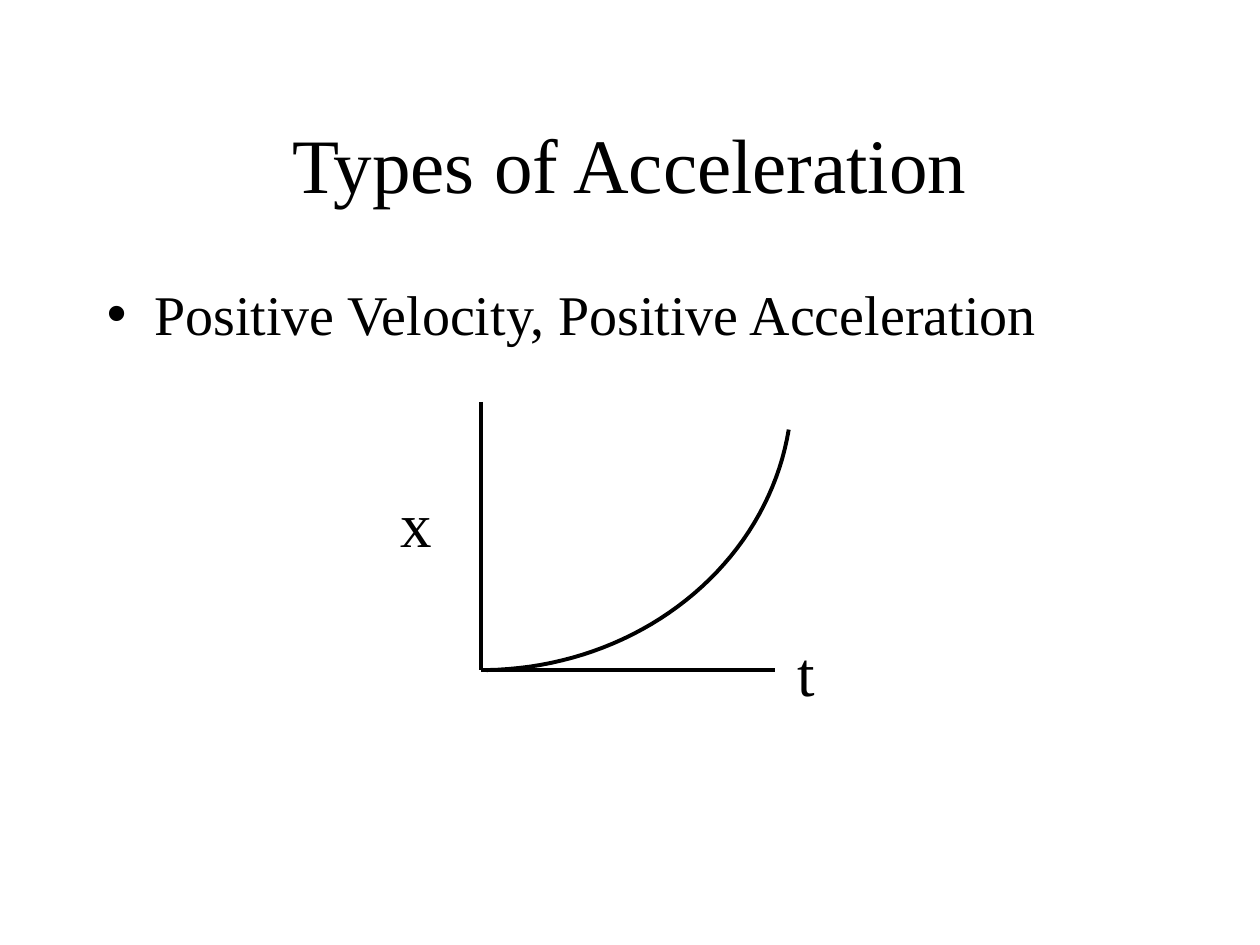
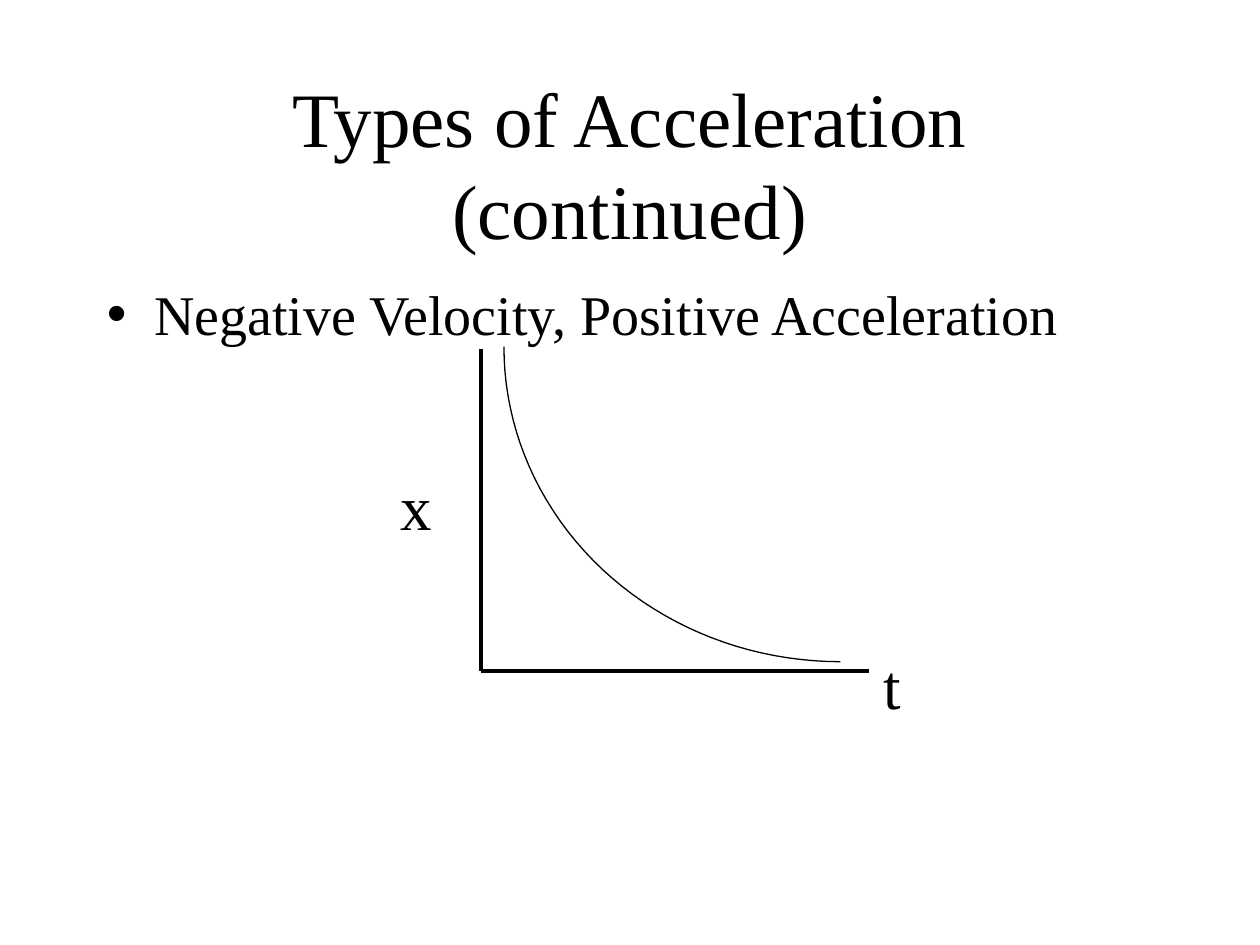
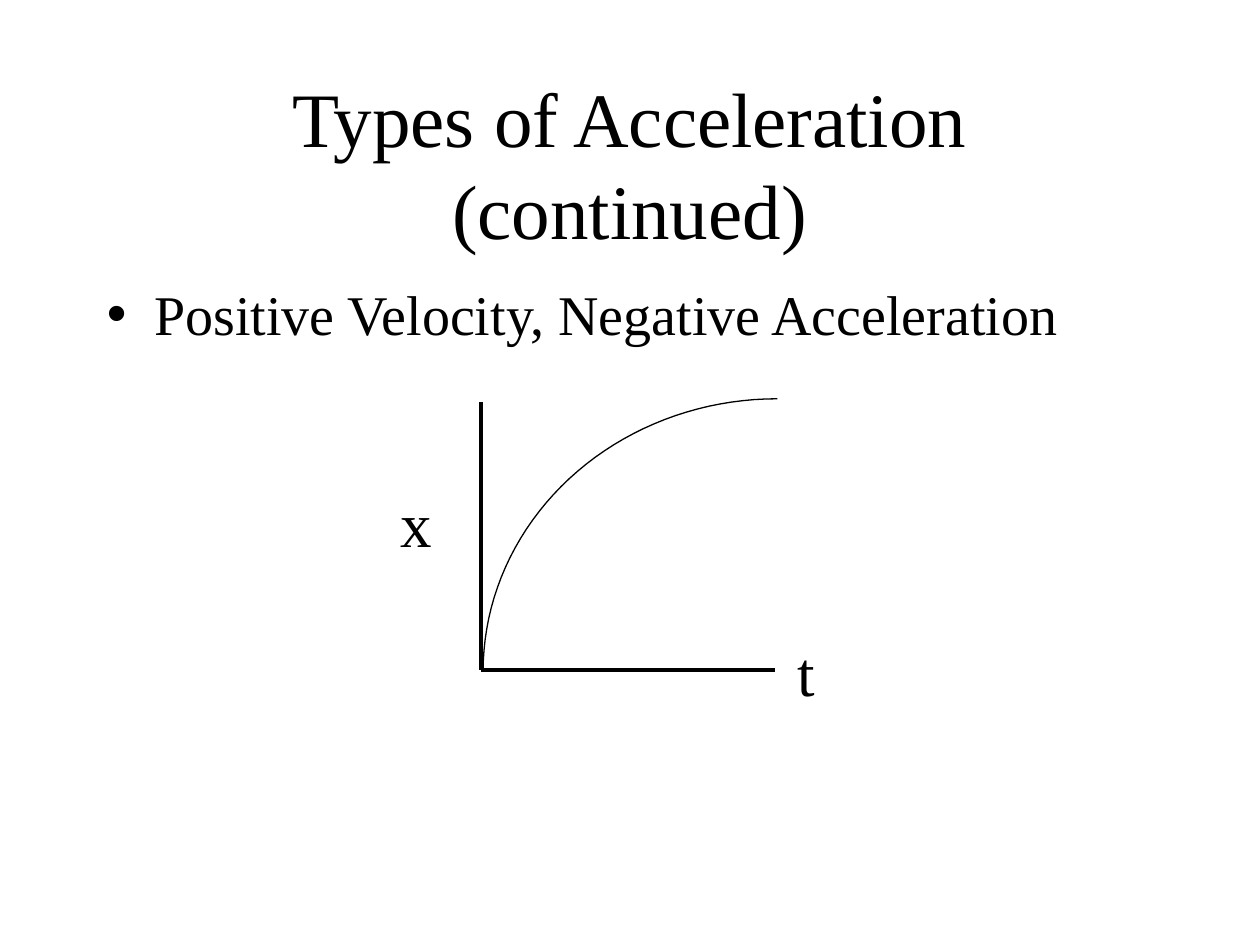
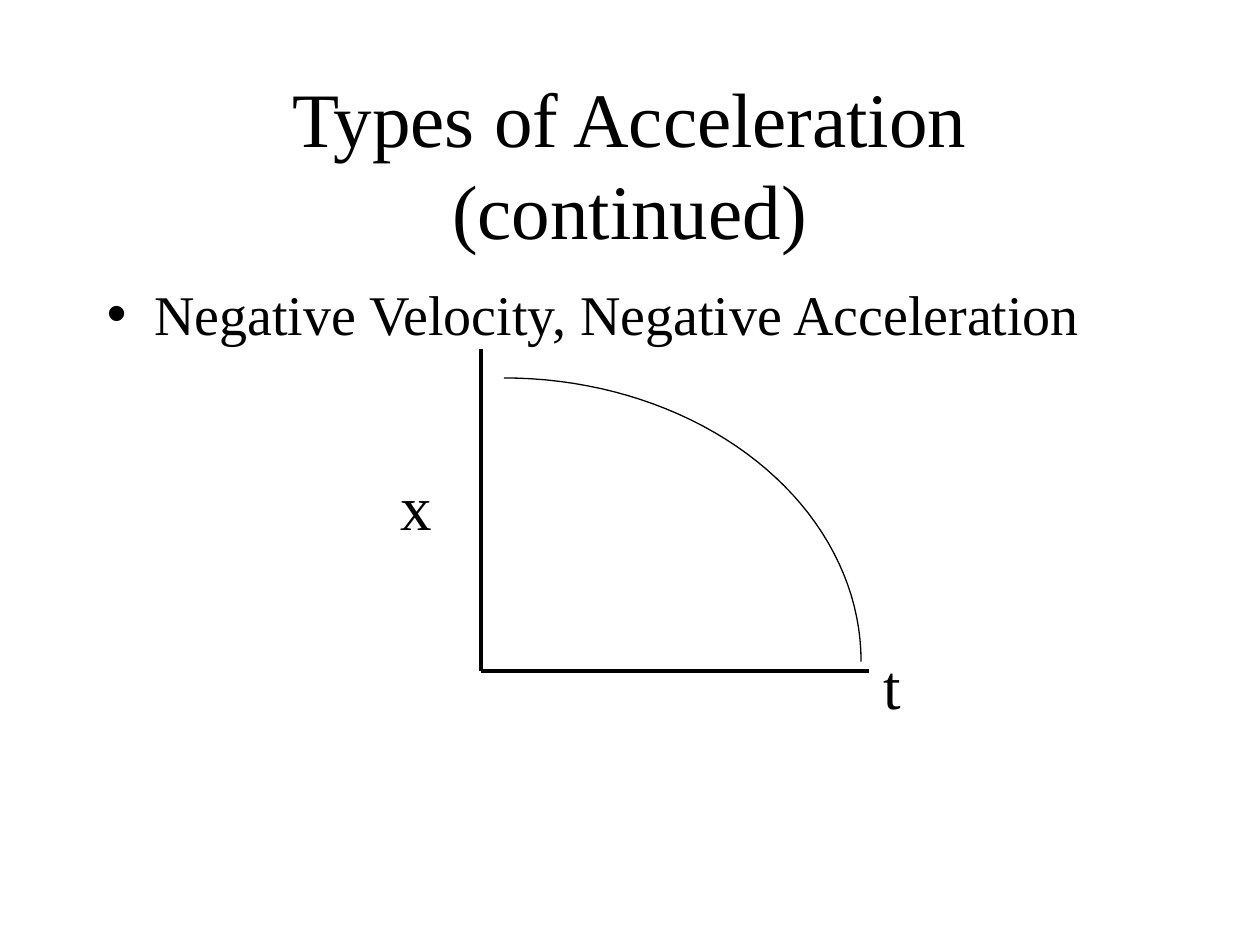
from math import cos, radians, sin

from lxml import etree
from pptx import Presentation
from pptx.dml.color import RGBColor
from pptx.enum.shapes import MSO_CONNECTOR
from pptx.enum.text import MSO_ANCHOR, MSO_AUTO_SIZE, PP_ALIGN
from pptx.oxml.ns import qn
from pptx.util import Cm, Pt

STRAIGHT = MSO_CONNECTOR.STRAIGHT
TOP, MIDDLE = MSO_ANCHOR.TOP, MSO_ANCHOR.MIDDLE
FIXED, GROW = MSO_AUTO_SIZE.NONE, MSO_AUTO_SIZE.SHAPE_TO_FIT_TEXT
LEFT, CENTER = PP_ALIGN.LEFT, PP_ALIGN.CENTER

COLORS = {"ink": "000000", "paper": "FFFFFF"}
FONT = "Times New Roman"
AXIS_WEIGHT = 2.25
CURVE_STEPS = 40

TITLE_BOX = (1.9, 1.69, 21.59, 3.18)
BODY_BOX = (1.9, 5.5, 21.59, 11.43)

TITLE_STYLE = {
    "size": 44,
    "align": CENTER,
    "frame": {
        "auto_size": FIXED,
        "vertical_anchor": MIDDLE,
        "word_wrap": True,
        "margin_left": Cm(0.3),
        "margin_right": Cm(0.3),
    },
}
BODY_STYLE = {
    "size": 32,
    "align": LEFT,
    "frame": {"auto_size": FIXED, "vertical_anchor": TOP, "word_wrap": True},
}
X_LABEL_STYLE = {
    "size": 36,
    "align": LEFT,
    "frame": {"word_wrap": True, "auto_size": GROW},
}
T_LABEL_STYLE = {
    "size": 36,
    "align": LEFT,
    "frame": {"word_wrap": False, "auto_size": GROW},
}

SMALL_PLOT = {
    "box": (9.7, 8.1, 5.92, 5.41),
    "x_label": (-1.88, 1.55, 1.6, 1.78),
    "t_label": (6.12, 4.55, 0.86, 1.78),
}
LARGE_PLOT = {
    "box": (9.7, 7.04, 7.82, 6.48),
    "x_label": (-1.88, 2.26, 2.13, 1.78),
    "t_label": (7.87, 5.87, 0.86, 1.78),
}

CONTINUED = "Types of Acceleration (continued)"
PAGES = [
    {
        "title": "Types of Acceleration",
        "body": "Positive Velocity, Positive Acceleration",
        "plot": SMALL_PLOT,
        "curve": {"center": (0, -0.28), "radii": (6.27, 5.69),
                  "sweep": (89, 8.5), "weight": AXIS_WEIGHT},
        "grouped": True,
    },
    {
        "title": CONTINUED,
        "body": "Negative Velocity, Positive Acceleration",
        "plot": LARGE_PLOT,
        "curve": {"center": (7.24, -0.05), "radii": (6.78, 6.35),
                  "sweep": (90, 180), "weight": 0.75},
        "grouped": False,
    },
    {
        "title": CONTINUED,
        "body": "Positive Velocity, Negative Acceleration",
        "plot": SMALL_PLOT,
        "curve": {"center": (5.97, 5.44), "radii": (5.93, 5.5),
                  "sweep": (270, 180), "weight": 0.75},
        "grouped": False,
    },
    {
        "title": CONTINUED,
        "body": "Negative Velocity, Negative Acceleration",
        "plot": LARGE_PLOT,
        "curve": {"center": (0.46, 6.3), "radii": (7.2, 5.72),
                  "sweep": (270, 360), "weight": 0.75},
        "grouped": False,
    },
]


def color(name):
    return RGBColor.from_string(COLORS[name])


def set_attributes(target, values):
    for name, value in values.items():
        setattr(target, name, value)


def write_text(box, text, style):
    frame = box.text_frame
    set_attributes(frame, style["frame"])
    para = frame.paragraphs[0]
    para.alignment = style["align"]
    span = para.add_run()
    span.text = text
    set_attributes(span.font, {"name": FONT, "size": Pt(style["size"])})
    span.font.color.rgb = color("ink")


def fill_placeholder(box, bounds, text, style):
    names = ("left", "top", "width", "height")
    set_attributes(box, dict(zip(names, map(Cm, bounds))))
    write_text(box, text, style)


def draw_line_style(shape, weight):
    shape.line.color.rgb = color("ink")
    shape.line.width = Pt(weight)


def add_axis(shapes, start, end):
    axis = shapes.add_connector(STRAIGHT, *map(Cm, start + end))
    draw_line_style(axis, AXIS_WEIGHT)
    etree.SubElement(axis._element.spPr, qn("a:effectLst"))


def add_label(shapes, origin, bounds, text, style):
    left, top, width, height = bounds
    box = shapes.add_textbox(
        Cm(origin[0] + left), Cm(origin[1] + top), Cm(width), Cm(height))
    write_text(box, text, style)


def add_curve(shapes, origin, curve):
    center_x, center_y = (a + b for a, b in zip(origin, curve["center"]))
    radius_x, radius_y = curve["radii"]
    first, last = curve["sweep"]
    points = []
    for step in range(CURVE_STEPS + 1):
        angle = radians(first + (last - first) * step / CURVE_STEPS)
        points.append((Cm(center_x + radius_x * cos(angle)),
                       Cm(center_y + radius_y * sin(angle))))
    builder = shapes.build_freeform(*points[0])
    builder.add_line_segments(points[1:], close=False)
    arc = builder.convert_to_shape()
    arc.shadow.inherit = False
    arc.fill.background()
    draw_line_style(arc, curve["weight"])


def add_plot(shapes, plot, curve):
    left, top, width, height = plot["box"]
    origin = (left, top)
    corner = (left, top + height)
    add_axis(shapes, origin, corner)
    add_axis(shapes, corner, (left + width, top + height))
    add_curve(shapes, origin, curve)
    add_label(shapes, origin, plot["x_label"], "x", X_LABEL_STYLE)
    add_label(shapes, origin, plot["t_label"], "t", T_LABEL_STYLE)


def add_page(deck, content):
    page = deck.slides.add_slide(deck.slide_layouts[1])
    title, body = page.placeholders
    fill_placeholder(title, TITLE_BOX, content["title"], TITLE_STYLE)
    fill_placeholder(body, BODY_BOX, content["body"], BODY_STYLE)
    shapes = page.shapes
    if content["grouped"]:
        shapes = shapes.add_group_shape().shapes
    add_plot(shapes, content["plot"], content["curve"])


def main():
    deck = Presentation()
    deck.slide_width, deck.slide_height = Cm(25.4), Cm(19.05)
    backdrop = deck.slide_master.background.fill
    backdrop.solid()
    backdrop.fore_color.rgb = color("paper")
    for content in PAGES:
        add_page(deck, content)
    deck.save("out.pptx")


if __name__ == "__main__":
    main()
